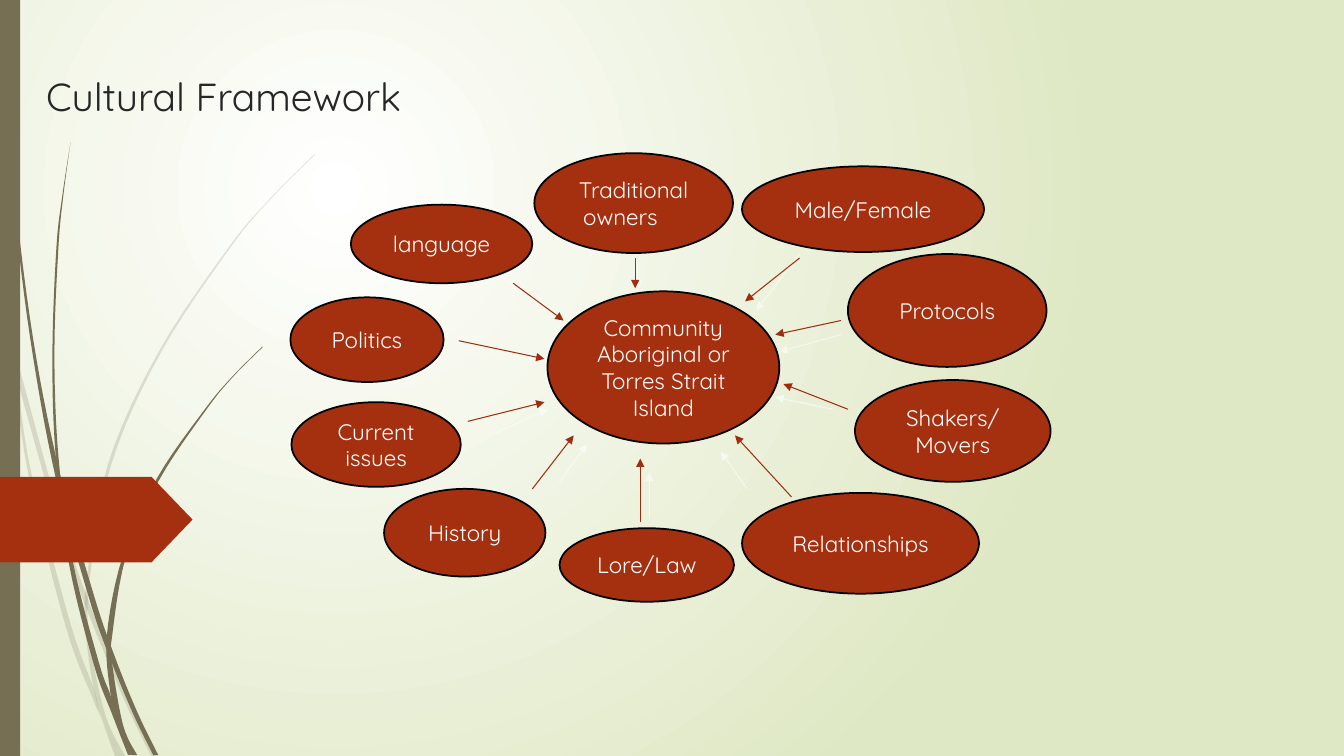
from lxml import etree
from pptx import Presentation, util as u
from pptx.dml.color import RGBColor
from pptx.enum import shapes, text
from pptx.oxml.ns import qn

WIDTH, HEIGHT = 13.33, 7.5
FONT = "Quicksand"
WHITE = RGBColor(0xFF, 0xFF, 0xFF)
BLACK = RGBColor(0, 0, 0)
INK = RGBColor(0x26, 0x26, 0x26)
LEAF = RGBColor(0xDF, 0xE8, 0xC4)
OLIVE = RGBColor(0x76, 0x6F, 0x54)
RUST = RGBColor(0xA5, 0x30, 0x10)
DARK_RUST = RGBColor(0x9E, 0x2E, 0x0F)

TITLE = "Cultural Framework"

BUBBLES = [
    (["Community", "Aboriginal or Torres Strait Island"], (5.43, 2.89, 2.3, 1.51)),
    (["Traditional owners\t"], (5.3, 1.52, 1.97, 0.99)),
    (["Male/Female"], (7.36, 1.65, 2.4, 0.85)),
    (["language"], (3.48, 2.03, 1.8, 0.78)),
    (["Politics"], (2.88, 2.95, 1.52, 0.84)),
    (["Protocols"], (8.41, 2.52, 1.97, 1.12)),
    (["Current issues"], (2.89, 3.99, 1.68, 0.84)),
    (["History"], (3.81, 4.85, 1.6, 0.87)),
    (["Relationships"], (7.36, 4.89, 2.35, 1)),
    (["Shakers/", "Movers"], (8.48, 3.77, 1.94, 1.01)),
    (["Lore/Law"], (5.55, 5.24, 1.73, 0.73)),
]

PALE_ARROWS = [
    (4.64, 3.49, 5.34, 3.54), (4.99, 2.76, 5.59, 3.18), (6.31, 2.52, 6.34, 2.86),
    (7.93, 2.52, 7.5, 3.08), (8.34, 3.32, 7.73, 3.49), (4.91, 4.3, 5.43, 4.06),
    (5.55, 4.78, 5.82, 4.41), (7.41, 4.85, 7.15, 4.48), (8.26, 4.06, 7.69, 3.94),
    (6.44, 5.15, 6.44, 4.69),
]
RUST_ARROWS = [
    (6.35, 5.18, 6.35, 4.55), (7.85, 4.93, 7.29, 4.32), (8.41, 4.06, 7.77, 3.81),
    (8.34, 3.18, 7.69, 3.32), (7.93, 2.56, 7.39, 2.99), (6.3, 2.56, 6.3, 2.86),
    (5.09, 2.81, 5.59, 3.18), (4.55, 3.38, 5.4, 3.56), (4.64, 4.18, 5.4, 3.99),
    (5.28, 4.85, 5.69, 4.32),
]

PALE_STALKS = [
    ([(0, 2.99), (0.1, 3.44), (0.17, 3.76), (0.58, 5.22), (0.84, 5.99), (1.23, 6.94), (1.5, 7.5)],
     [(1.55, 7.5), (1.27, 6.92), (0.92, 6.07), (0.62, 5.2), (0.14, 3.45), (0.09, 3.22), (0, 2.82)]),
    ([(0.11, 3.5), (0.28, 4.7), (0.65, 6.21), (0.92, 6.93), (1.01, 7.14), (1.14, 7.5)],
     [(1.19, 7.5), (1.01, 7.14), (0.93, 6.83), (0.7, 6.19), (0.31, 4.69), (0.17, 3.76)]),
    ([(3.12, 1.53), (2.68, 1.97), (2.28, 2.44), (1.58, 3.48), (1.07, 4.61), (0.85, 5.84),
      (0.87, 6.46), (0.99, 7.07), (1.19, 7.5)],
     [(1.24, 7.5), (1.05, 7.11), (0.91, 6.46), (0.88, 5.84), (1.1, 4.62), (1.6, 3.49),
      (2.29, 2.45), (2.68, 1.98), (3.12, 1.54)]),
]
OLIVE_STALKS = [
    ([(0.03, 0), (0.07, 1.1), (0.17, 2.33), (0.33, 3.55), (0.56, 4.77), (0.88, 5.92),
      (1.06, 6.45), (1.32, 7.08), (1.52, 7.49)],
     [(1.57, 7.49), (1.36, 7.06), (1.13, 6.49), (0.93, 5.9), (0.6, 4.72), (0.36, 3.55),
      (0.19, 2.32), (0.08, 1.09), (0.04, 0)]),
    ([(0.7, 1.41), (0.62, 1.93), (0.56, 2.45), (0.52, 3.49), (0.55, 4.49), (0.68, 5.57),
      (0.93, 6.59), (1.11, 7.08), (1.27, 7.49)],
     [(1.31, 7.49), (1.17, 7.2), (1.1, 6.91), (0.98, 6.57), (0.72, 5.56), (0.58, 4.53),
      (0.54, 3.49), (0.58, 2.45), (0.63, 1.93), (0.7, 1.41)]),
    ([(2.6, 3.44), (2.31, 3.73), (2.04, 4.05), (1.56, 4.74), (1.22, 5.51), (1.06, 6.31),
      (1.1, 6.91), (1.17, 7.22), (1.31, 7.49)],
     [(1.36, 7.49), (1.22, 7.19), (1.11, 6.56), (1.11, 6.33), (1.25, 5.52), (1.58, 4.76),
      (2.05, 4.06), (2.31, 3.74), (2.61, 3.44)]),
]


def inches(values):
    return [u.Inches(v) for v in values]


def smooth(knots, steps=6):
    ends = [knots[0], *knots, knots[-1]]
    curve = []
    for a, b, c, d in zip(ends, ends[1:], ends[2:], ends[3:]):
        for t in (i / steps for i in range(steps)):
            curve.append([
                (2 * q + (r - p) * t + (2 * p - 5 * q + 4 * r - s) * t ** 2
                 + (3 * q - p - 3 * r + s) * t ** 3) / 2
                for p, q, r, s in zip(a, b, c, d)])
    return curve + [knots[-1]]


def set_opacity(element, percent):
    color = element.find(".//" + qn("a:srgbClr"))
    etree.SubElement(color, qn("a:alpha"), val=str(percent * 1000))


def paint(sp, color):
    sp.shadow.inherit = False
    sp.fill.solid()
    sp.fill.fore_color.rgb = color
    sp.line.fill.background()


def add_preset(s, kind, box, color):
    sp = s.shapes.add_shape(kind, *inches(box))
    paint(sp, color)
    return sp


def add_stalk(s, edges, opacity):
    points = [inches(point) for edge in edges for point in smooth(edge)]
    builder = s.shapes.build_freeform(*points[0])
    builder.add_line_segments(points[1:])
    sp = builder.convert_to_shape()
    paint(sp, OLIVE)
    set_opacity(sp.element.spPr, opacity)


def add_bubble(s, lines, box):
    sp = add_preset(s, shapes.MSO_SHAPE.OVAL, box, RUST)
    sp.line.color.rgb = BLACK
    sp.line.width = u.Pt(1.25)
    tf = sp.text_frame
    tf.word_wrap = True
    tf.vertical_anchor = text.MSO_ANCHOR.MIDDLE
    tf.text = "\n".join(lines)
    for p in tf.paragraphs:
        p.alignment = text.PP_ALIGN.CENTER
        style(p, 16, WHITE)


def style(p, size, color):
    p.font.name = FONT
    p.font.size = u.Pt(size)
    p.font.color.rgb = color


def add_arrow(s, ends, color, opacity, width=0.75):
    line = s.shapes.add_connector(shapes.MSO_CONNECTOR.STRAIGHT, *inches(ends))
    line.line.color.rgb = color
    line.line.width = u.Pt(width)
    sp_pr = line.element.spPr
    set_opacity(sp_pr, opacity)
    etree.SubElement(sp_pr.find(qn("a:ln")), qn("a:tailEnd"), type="triangle")
    etree.SubElement(sp_pr, qn("a:effectLst"))


def add_background(s):
    fill = s.background.fill
    fill.gradient()
    for stop, color, position in zip(fill.gradient_stops, (WHITE, LEAF), (0, 1)):
        stop.color.rgb = color
        stop.position = position
    grad = s.element.find(".//" + qn("a:gradFill"))
    grad.remove(grad.find(qn("a:lin")))
    circle = etree.SubElement(grad, qn("a:path"), path="circle")
    etree.SubElement(circle, qn("a:fillToRect"), l="50000", t="50000", r="100000", b="100000")


def add_title(s):
    tf = s.shapes.add_textbox(*inches((0.36, 0.02, 8.58, 1.21))).text_frame
    tf.word_wrap = True
    tf.vertical_anchor = text.MSO_ANCHOR.BOTTOM
    tf.text = TITLE
    style(tf.paragraphs[0], 27.9, INK)


def main():
    prs = Presentation()
    prs.slide_width, prs.slide_height = inches((WIDTH, HEIGHT))
    s = prs.slides.add_slide(prs.slide_layouts[6])
    add_background(s)
    for stalks, opacity in ((PALE_STALKS, 20), (OLIVE_STALKS, 100)):
        for edges in stalks:
            add_stalk(s, edges, opacity)
    add_preset(s, shapes.MSO_SHAPE.RECTANGLE, (0, 0, 0.2, HEIGHT), OLIVE)
    tag = add_preset(s, shapes.MSO_SHAPE.PENTAGON, (0, 4.73, 1.91, 0.85), RUST)
    tag.adjustments[0] = 0.48
    add_title(s)
    for lines, box in BUBBLES:
        add_bubble(s, lines, box)
    for index, ends in enumerate(PALE_ARROWS):
        add_arrow(s, ends, WHITE, 60, 0.75 if index else 0.25)
    for ends in RUST_ARROWS:
        add_arrow(s, ends, DARK_RUST, 100)
    prs.save("out.pptx")


if __name__ == "__main__":
    main()
